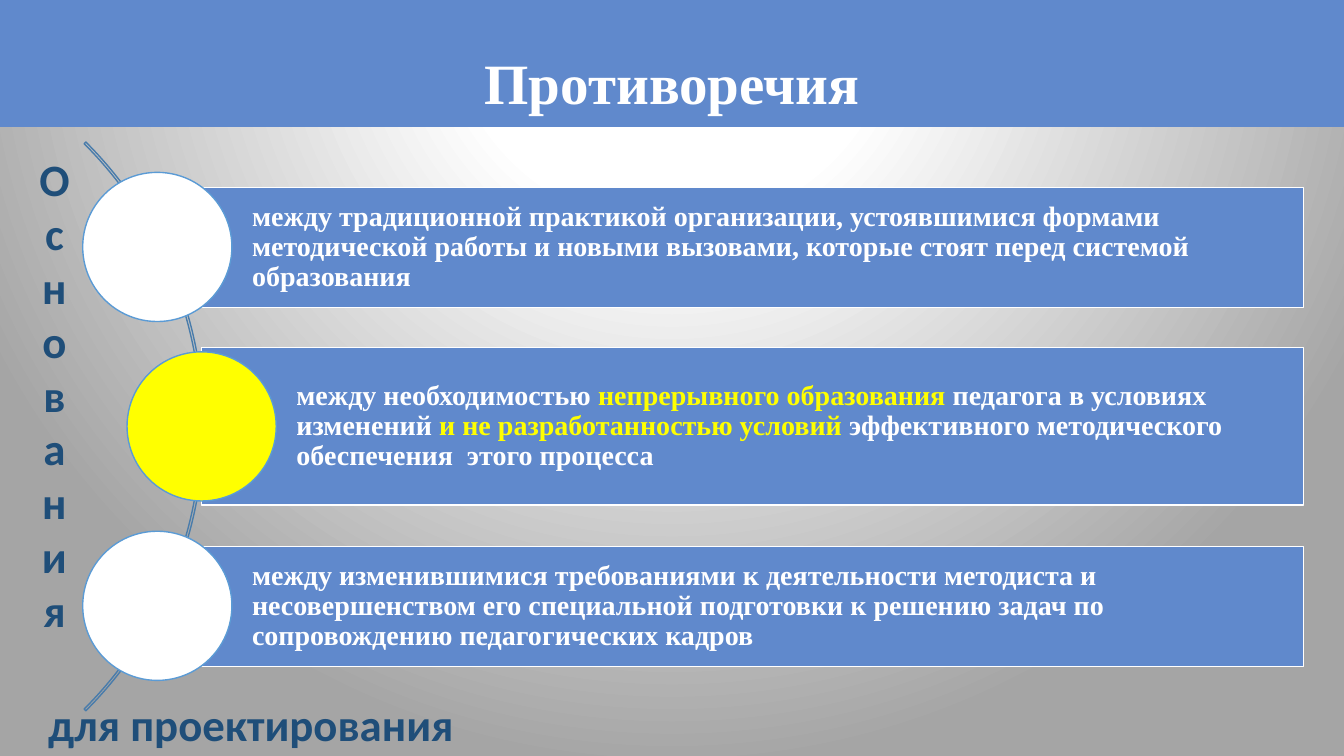
from lxml.etree import fromstring
from pptx import Presentation
from pptx.dml.color import RGBColor
from pptx.enum.shapes import MSO_SHAPE
from pptx.enum.text import MSO_ANCHOR, MSO_AUTO_SIZE, PP_ALIGN
from pptx.oxml.ns import nsdecls
from pptx.util import Emu, Pt

PX = 9144  # 100 px to the inch
SLIDE_W, SLIDE_H = 1333, 750

BLUE = RGBColor(0x60, 0x89, 0xCC)
NAVY = RGBColor(0x1F, 0x4E, 0x79)
ARC_BLUE = RGBColor(0x49, 0x7C, 0xAB)
RING_BLUE = RGBColor(0x5B, 0x9B, 0xD5)
WHITE = RGBColor(0xFF, 0xFF, 0xFF)
YELLOW = RGBColor(0xFF, 0xFF, 0x00)

SERIF, SANS = "Times New Roman", "Calibri"

# Rows are centred on a common pitch; each bar starts at its circle's centre
FIRST_Y, PITCH = 245, 178
CIRCLE_D = 148
BAR_RIGHT = 1293

# Each row: circle centre x, bar height, circle colour, text runs with colours
ROWS = [
    (156, 119, WHITE, [
        ("между традиционной практикой организации, устоявшимися формами "
         "методической работы и новыми вызовами, которые стоят перед "
         "системой образования", WHITE)]),
    (200, 156, YELLOW, [
        ("между необходимостью ", WHITE),
        ("непрерывного образования ", YELLOW),
        ("педагога в условиях изменений ", WHITE),
        ("и не разработанностью условий ", YELLOW),
        ("эффективного методического обеспечения  этого процесса", WHITE)]),
    (156, 119, WHITE, [
        ("между изменившимися требованиями к деятельности методиста и "
         "несовершенством его специальной подготовки к решению задач по "
         "сопровождению педагогических кадров", WHITE)]),
]

BACKGROUND = f"""<p:bg {nsdecls('p', 'a')}><p:bgPr>
<a:gradFill rotWithShape="1"><a:gsLst>
<a:gs pos="0"><a:srgbClr val="FFFFFF"/></a:gs>
<a:gs pos="28000"><a:srgbClr val="FFFFFF"/></a:gs>
<a:gs pos="100000"><a:srgbClr val="A5A5A5"/></a:gs>
</a:gsLst><a:path path="circle">
<a:fillToRect l="50000" t="-80000" r="50000" b="180000"/>
</a:path></a:gradFill><a:effectLst/></p:bgPr></p:bg>"""


def box(x, y, w, h):
    return [Emu(v * PX) for v in (x, y, w, h)]


def add_shape(s, kind, x, y, w, h, fill=None, line=None):
    sp = s.shapes.add_shape(kind, *box(x, y, w, h))
    sp.shadow.inherit = False
    if fill is None:
        sp.fill.background()
    else:
        sp.fill.solid()
        sp.fill.fore_color.rgb = fill
    if line is None:
        sp.line.fill.background()
    else:
        sp.line.color.rgb = line
        sp.line.width = Pt(1)
    return sp


def set_font(p, name, size, color=None):
    p.font.name = name
    p.font.size = Pt(size)
    p.font.bold = True
    if color is not None:
        p.font.color.rgb = color


def add_title(s, text):
    sp = add_shape(s, MSO_SHAPE.RECTANGLE, 0, 0, SLIDE_W, 126, BLUE)
    tf = sp.text_frame
    tf.vertical_anchor = MSO_ANCHOR.BOTTOM
    tf.margin_bottom = Emu(11 * PX)
    p = tf.paragraphs[0]
    p.text = text
    p.alignment = PP_ALIGN.CENTER
    p.line_spacing = 0.8
    set_font(p, SERIF, 40.7, WHITE)


def add_arc(s):
    sp = add_shape(s, MSO_SHAPE.BLOCK_ARC, -596, 24, 798, 798, line=ARC_BLUE)
    for i, value in enumerate((189, 27, 0.003)):
        sp.adjustments[i] = value


def add_row(s, cx, cy, bar_h, color, runs):
    bar = add_shape(s, MSO_SHAPE.RECTANGLE, cx, cy - bar_h // 2,
                    BAR_RIGHT - cx, bar_h, BLUE, WHITE)
    tf = bar.text_frame
    tf.vertical_anchor = MSO_ANCHOR.MIDDLE
    tf.margin_left = Emu(94 * PX)
    tf.margin_top = tf.margin_right = tf.margin_bottom = Emu(6 * PX)
    p = tf.paragraphs[0]
    p.alignment = PP_ALIGN.LEFT
    p.line_spacing = 0.9
    set_font(p, SERIF, 20)
    for text, run_color in runs:
        r = p.add_run()
        r.text = text
        r.font.color.rgb = run_color
    radius = CIRCLE_D // 2
    add_shape(s, MSO_SHAPE.OVAL, cx - radius, cy - radius,
              CIRCLE_D, CIRCLE_D, color, RING_BLUE)


def add_label(s, text, x, y, w, h, stacked=False):
    tf = s.shapes.add_textbox(*box(x, y, w, h)).text_frame
    tf.word_wrap = True
    tf.auto_size = MSO_AUTO_SIZE.SHAPE_TO_FIT_TEXT
    p = tf.paragraphs[0]
    p.text = text
    set_font(p, SANS, 32, NAVY)
    if stacked:
        p.alignment = PP_ALIGN.CENTER
        tf._txBody.bodyPr.set("vert", "wordArtVert")


def main():
    prs = Presentation()
    prs.slide_width, prs.slide_height = Emu(SLIDE_W * PX), Emu(SLIDE_H * PX)
    s = prs.slides.add_slide(prs.slide_layouts[6])

    # Background and title band
    s.element.cSld.insert(0, fromstring(BACKGROUND))
    add_title(s, "Противоречия")

    # Arc with the three contradictions
    add_arc(s)
    for i, (cx, bar_h, color, runs) in enumerate(ROWS):
        add_row(s, cx, FIRST_Y + i * PITCH, bar_h, color, runs)

    # Side and bottom captions
    add_label(s, "Основания", 12, 79, 84, 624, stacked=True)
    add_label(s, "для проектирования", 38, 686, 676, 64)

    prs.save("out.pptx")


if __name__ == "__main__":
    main()
